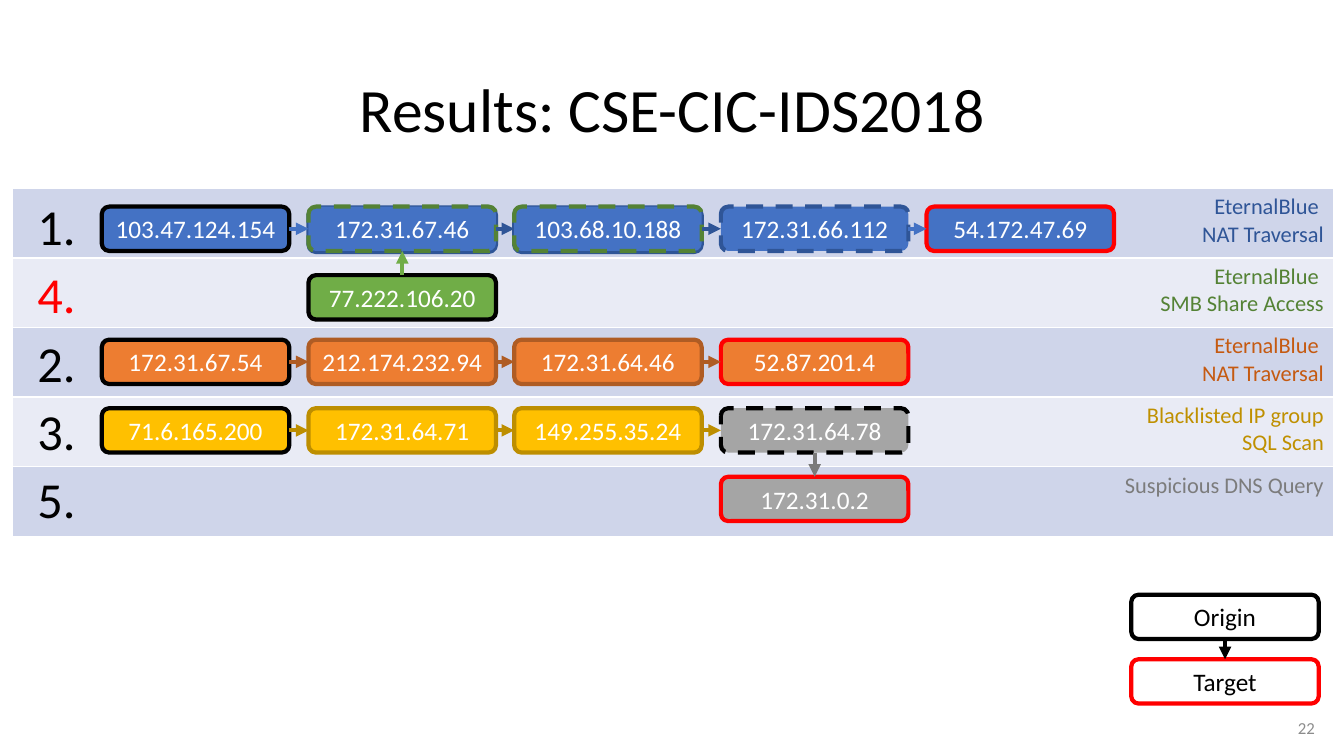
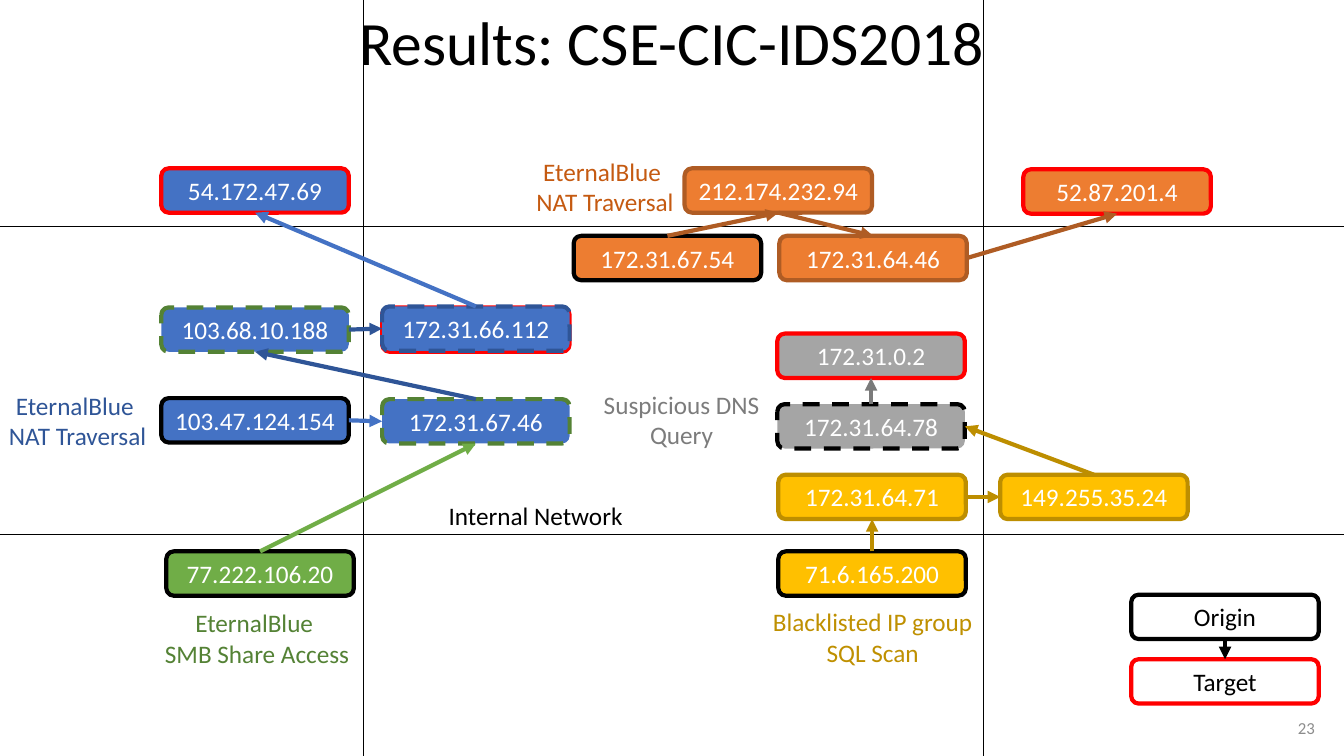
from dataclasses import dataclass

from lxml.etree import SubElement
from pptx import Presentation
from pptx.dml.color import RGBColor
from pptx.enum.dml import MSO_LINE
from pptx.enum.shapes import MSO_CONNECTOR, MSO_SHAPE
from pptx.enum.text import MSO_ANCHOR, MSO_AUTO_SIZE, PP_ALIGN
from pptx.oxml.ns import qn
from pptx.util import Inches, Pt


@dataclass(frozen=True)
class Theme:
    font: str = "Calibri"
    black: str = "000000"
    white: str = "FFFFFF"
    red: str = "FF0000"
    blue: str = "4472C4"
    dark_blue: str = "2F5597"
    green: str = "70AD47"
    dark_green: str = "548235"
    orange: str = "ED7D31"
    dark_orange: str = "AF5C24"
    orange_text: str = "C55A11"
    gold: str = "FFC000"
    dark_gold: str = "BD8E00"
    gold_text: str = "BF9000"
    gray: str = "A5A5A5"
    dark_gray: str = "7A7A7A"
    gray_text: str = "7C7C7C"
    page_gray: str = "8C8C8C"
    bands: tuple = ("CFD5EA", "E9EBF5")
    title_size: int = 44
    number_size: int = 36
    node_size: int = 18
    alert_size: int = 16
    page_size: int = 12
    node_line: float = 3
    grid_line: float = 0.5


T = Theme()
SLIDE_W, SLIDE_H = 13.33, 7.5
NODE_W, NODE_H = 1.86, 0.44
TOP, LEFT, BOTTOM, RIGHT = range(4)
TITLE = "Results: CSE-CIC-IDS2018"
FIRST_PAGE = 22

HOSTS = {
    "103.47.124.154": (T.blue, T.black, False),
    "172.31.67.46": (T.blue, T.dark_green, True),
    "103.68.10.188": (T.blue, T.dark_green, True),
    "172.31.66.112": (T.blue, T.dark_blue, True),
    "54.172.47.69": (T.blue, T.red, False),
    "77.222.106.20": (T.green, T.black, False),
    "172.31.67.54": (T.orange, T.black, False),
    "212.174.232.94": (T.orange, T.dark_orange, False),
    "172.31.64.46": (T.orange, T.dark_orange, False),
    "52.87.201.4": (T.orange, T.red, False),
    "71.6.165.200": (T.gold, T.black, False),
    "172.31.64.71": (T.gold, T.dark_gold, False),
    "149.255.35.24": (T.gold, T.dark_gold, False),
    "172.31.64.78": (T.gray, T.black, True),
    "172.31.0.2": (T.gray, T.red, False),
}

HOPS = [
    ("103.47.124.154", "172.31.67.46", T.blue),
    ("172.31.67.46", "103.68.10.188", T.dark_blue),
    ("103.68.10.188", "172.31.66.112", T.dark_blue),
    ("172.31.66.112", "54.172.47.69", T.blue),
    ("77.222.106.20", "172.31.67.46", T.green),
    ("172.31.67.54", "212.174.232.94", T.dark_orange),
    ("212.174.232.94", "172.31.64.46", T.dark_orange),
    ("172.31.64.46", "52.87.201.4", T.dark_orange),
    ("71.6.165.200", "172.31.64.71", T.dark_gold),
    ("172.31.64.71", "149.255.35.24", T.dark_gold),
    ("149.255.35.24", "172.31.64.78", T.dark_gold),
    ("172.31.64.78", "172.31.0.2", T.dark_gray),
]

ALERTS = [
    ("1.", T.black, ["EternalBlue ", "NAT Traversal"], T.dark_blue),
    ("4.", T.red, ["EternalBlue ", "SMB Share Access"], T.dark_green),
    ("2.", T.black, ["EternalBlue ", "NAT Traversal"], T.orange_text),
    ("3.", T.black, ["Blacklisted IP group", "SQL Scan"], T.gold_text),
    ("5.", T.black, ["Suspicious DNS Query"], T.gray_text),
]

CHAINS = [
    (2.05, 0, ["103.47.124.154", "172.31.67.46", "103.68.10.188", "172.31.66.112", "54.172.47.69"]),
    (2.73, 1, ["77.222.106.20"]),
    (3.37, 0, ["172.31.67.54", "212.174.232.94", "172.31.64.46", "52.87.201.4"]),
    (4.05, 0, ["71.6.165.200", "172.31.64.71", "149.255.35.24", "172.31.64.78"]),
    (4.73, 3, ["172.31.0.2"]),
]
CHAIN_LEFTS = (1.01, 3.06, 5.1, 7.15, 9.19)
CHAIN_PLACES = {
    host: (left, top)
    for top, start, hosts in CHAINS
    for host, left in zip(hosts, CHAIN_LEFTS[start:])
}
CHAIN_BACKS = {"172.31.67.46": T.dark_blue, "103.68.10.188": T.dark_blue}
CHAIN_SIDES = {"77.222.106.20": (TOP, BOTTOM), "172.31.64.78": (BOTTOM, TOP)}

MAP_PLACES = {
    "54.172.47.69": (1.6, 1.67),
    "103.68.10.188": (1.6, 3.05),
    "172.31.66.112": (3.79, 3.04),
    "103.47.124.154": (1.6, 3.95),
    "172.31.67.46": (3.79, 3.96),
    "77.222.106.20": (1.65, 5.47),
    "172.31.67.54": (5.69, 2.34),
    "212.174.232.94": (6.79, 1.67),
    "172.31.64.46": (7.73, 2.34),
    "52.87.201.4": (10.15, 1.68),
    "172.31.0.2": (7.71, 3.31),
    "172.31.64.78": (7.71, 4.01),
    "172.31.64.71": (7.72, 4.71),
    "149.255.35.24": (9.92, 4.71),
    "71.6.165.200": (7.72, 5.47),
}
MAP_BACKS = {"172.31.66.112": T.red}
MAP_SIDES = {
    "172.31.67.46": (TOP, BOTTOM),
    "172.31.66.112": (TOP, BOTTOM),
    "77.222.106.20": (TOP, BOTTOM),
    "172.31.67.54": (TOP, BOTTOM),
    "212.174.232.94": (BOTTOM, TOP),
    "172.31.64.46": (RIGHT, BOTTOM),
    "71.6.165.200": (TOP, BOTTOM),
    "149.255.35.24": (TOP, RIGHT),
    "172.31.64.78": (TOP, BOTTOM),
}
MAP_CAPTIONS = [
    (-0.05, 3.82, 1.64),
    (1.5, 5.98, 2.1),
    (5.18, 1.5, 1.64),
    (7.56, 5.97, 2.19),
    (5.83, 3.81, 1.86),
]
BORDERS = [
    (3.6, 0, 3.6, SLIDE_H),
    (9.75, 0, 9.75, SLIDE_H),
    (0, 2.25, SLIDE_W, 2.25),
    (0, 5.3, SLIDE_W, 5.3),
]
LEGEND = [("Origin", T.black, 5.9), ("Target", T.red, 6.54)]


def rgb(color):
    return RGBColor.from_string(color)


def inches(*lengths):
    return [Inches(length) for length in lengths]


def write(frame, lines, size, color, align):
    for i, line in enumerate(lines):
        paragraph = frame.paragraphs[0] if i == 0 else frame.add_paragraph()
        paragraph.alignment = align
        run = paragraph.add_run()
        run.text = line
        run.font.name = T.font
        run.font.size = Pt(size)
        run.font.bold = False
        run.font.color.rgb = rgb(color)


def place(part, left, top, width, height):
    part.left, part.top, part.width, part.height = inches(left, top, width, height)


def add_title(slide, left, top, width):
    title = slide.shapes.title
    place(title, left, top, width, 0.89)
    title.text_frame.vertical_anchor = MSO_ANCHOR.MIDDLE
    write(title.text_frame, [TITLE], T.title_size, T.black, PP_ALIGN.CENTER)
    title.text_frame.paragraphs[0].line_spacing = 0.9


def add_node(slide, lines, left, top, fill, border, dashed=False, color=T.white):
    node = slide.shapes.add_shape(MSO_SHAPE.ROUNDED_RECTANGLE, *inches(left, top, NODE_W, NODE_H))
    node.shadow.inherit = False
    node.fill.solid()
    node.fill.fore_color.rgb = rgb(fill)
    node.line.color.rgb = rgb(border)
    node.line.width = Pt(T.node_line)
    if dashed:
        node.line.dash_style = MSO_LINE.DASH
    frame = node.text_frame
    frame.margin_left = frame.margin_right = 0
    frame.vertical_anchor = MSO_ANCHOR.MIDDLE
    write(frame, lines, T.node_size, color, PP_ALIGN.CENTER)
    return node


def add_line(slide, color, width, ends=(0, 0, 0, 0)):
    line = slide.shapes.add_connector(MSO_CONNECTOR.STRAIGHT, *inches(*ends))
    line.line.color.rgb = rgb(color)
    line.line.width = Pt(width)
    SubElement(line.element.spPr, qn("a:effectLst"))
    return line


def add_arrow(slide, source, target, color, source_side, target_side):
    arrow = add_line(slide, color, T.node_line)
    arrow.begin_connect(source, source_side)
    arrow.end_connect(target, target_side)
    SubElement(arrow.line._get_or_add_ln(), qn("a:tailEnd"), type="triangle")


def add_hosts(slide, places, backs, sides):
    nodes = {}
    for host, (left, top) in places.items():
        fill, border, dashed = HOSTS[host]
        if host in backs:
            add_node(slide, [], left, top + 0.01, fill, backs[host])
        nodes[host] = add_node(slide, [host], left, top, fill, border, dashed)
    for source, target, color in HOPS:
        add_arrow(slide, nodes[source], nodes[target], color, *sides.get(source, (RIGHT, LEFT)))


def add_legend(slide):
    origin, target = [
        add_node(slide, [label], 11.22, top, T.white, border, color=T.black)
        for label, border, top in LEGEND
    ]
    add_arrow(slide, origin, target, T.black, BOTTOM, TOP)


def add_page_number(slide, number):
    frame = slide.shapes.add_textbox(*inches(10.14, 7.02, 3, 0.4)).text_frame
    frame.word_wrap = True
    frame.vertical_anchor = MSO_ANCHOR.MIDDLE
    write(frame, [str(number)], T.page_size, T.page_gray, PP_ALIGN.RIGHT)


def add_alert_table(slide):
    height = 0.69
    frame = slide.shapes.add_table(len(ALERTS), 1, *inches(0.12, 1.87, 13.11, height * len(ALERTS)))
    table = frame.table
    table.first_row = table.horz_banding = False
    for i, (_, _, lines, color) in enumerate(ALERTS):
        table.rows[i].height = Inches(height)
        cell = table.cell(i, 0)
        cell.fill.solid()
        cell.fill.fore_color.rgb = rgb(T.bands[i % 2])
        write(cell.text_frame, lines, T.alert_size, color, PP_ALIGN.RIGHT)


def add_numbers(slide):
    body = slide.placeholders[1]
    place(body, 0.27, 1.95, 11.5, 4.76)
    body.element.getparent().append(body.element)
    frame = body.text_frame
    frame.auto_size = MSO_AUTO_SIZE.NONE
    frame.vertical_anchor = MSO_ANCHOR.TOP
    write(frame, [alert[0] for alert in ALERTS], T.number_size, T.black, PP_ALIGN.LEFT)
    for i, paragraph in enumerate(frame.paragraphs):
        properties = paragraph._p.get_or_add_pPr()
        properties.set("marL", "0")
        properties.set("indent", "0")
        SubElement(properties, qn("a:buNone"))
        paragraph.line_spacing = 0.9
        paragraph.space_before = Pt(10 if i else 0)
        paragraph.runs[0].font.color.rgb = rgb(ALERTS[i][1])


def add_caption(slide, lines, color, left, top, width, height=0.71, wrap=True):
    frame = slide.shapes.add_textbox(*inches(left, top, width, height)).text_frame
    frame.word_wrap = wrap
    write(frame, lines, T.node_size, color, PP_ALIGN.CENTER if wrap else PP_ALIGN.LEFT)


def build_chains(slide):
    add_title(slide, 0.92, 0.67, 11.5)
    add_alert_table(slide)
    add_numbers(slide)
    add_hosts(slide, CHAIN_PLACES, CHAIN_BACKS, CHAIN_SIDES)


def build_map(slide):
    add_title(slide, 0, 0.01, SLIDE_W)
    for ends in BORDERS:
        add_line(slide, T.black, T.grid_line, ends)
    add_hosts(slide, MAP_PLACES, MAP_BACKS, MAP_SIDES)
    add_caption(slide, ["Internal Network"], T.black, 4.35, 4.91, 1.95, 0.4, wrap=False)
    for (_, _, lines, color), spot in zip(ALERTS, MAP_CAPTIONS):
        add_caption(slide, lines, color, *spot)


def main():
    deck = Presentation()
    deck.slide_width, deck.slide_height = inches(SLIDE_W, SLIDE_H)
    for i, (layout, build) in enumerate([(1, build_chains), (5, build_map)]):
        slide = deck.slides.add_slide(deck.slide_layouts[layout])
        build(slide)
        add_legend(slide)
        add_page_number(slide, FIRST_PAGE + i)
    deck.save("out.pptx")


if __name__ == "__main__":
    main()
